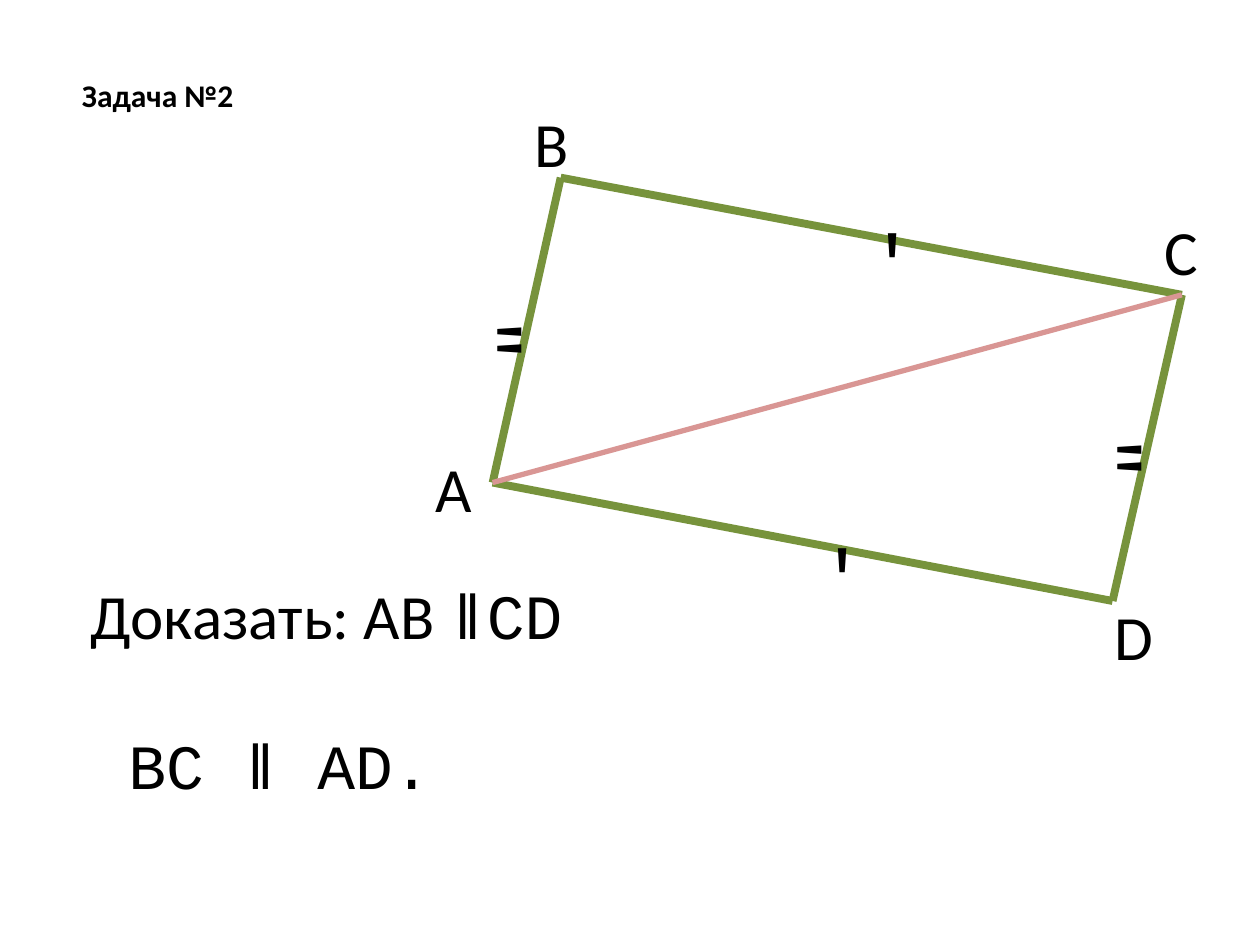
from typing import NamedTuple

import pptx
import pptx.dml.color
import pptx.enum.shapes
import pptx.enum.text
import pptx.oxml
import pptx.oxml.ns
import pptx.util

PX = 9144  # one px is a hundredth of an inch

BLACK = pptx.dml.color.RGBColor(0x00, 0x00, 0x00)
GREEN = pptx.dml.color.RGBColor(0x77, 0x93, 0x3C)
PINK = pptx.dml.color.RGBColor(0xD9, 0x96, 0x94)
SANS = "Calibri"
MONO = "Courier New"


class Point(NamedTuple):
    x: int
    y: int


class Segment(NamedTuple):
    start: Point
    end: Point
    color: pptx.dml.color.RGBColor
    weight: float


class Label(NamedTuple):
    text: str
    left: int
    top: int
    width: int
    height: int
    font: str
    size: int
    rotation: int = 0


A, B, C, D = Point(391, 383), Point(445, 141), Point(938, 234), Point(883, 477)

SEGMENTS = [
    *(Segment(start, end, GREEN, 4.5) for start, end in ((B, C), (A, D), (B, A), (C, D))),
    Segment(A, C, PINK, 3),
]

# Tick marks on equal sides, then the vertex letters
LABELS = [
    *(Label('"', left, top, 43, 84, MONO, 44, 90) for left, top in ((372, 222), (864, 315))),
    *(Label("'", left, top, 34, 84, MONO, 44) for left, top in ((641, 414), (680, 164))),
    Label("А", 336, 352, 55, 71, SANS, 36),
    Label("В", 414, 78, 55, 71, SANS, 36),
    Label("С", 914, 164, 55, 71, SANS, 36),
    Label("D", 875, 469, 59, 71, SANS, 36),
]


def px(length: int) -> pptx.util.Emu:
    return pptx.util.Emu(length * PX)


def style_font(font, name: str, size: int, bold: bool = False) -> None:
    font.name = name
    font.size = pptx.util.Pt(size)
    font.bold = bold
    font.color.rgb = BLACK


def draw_segment(slide, segment: Segment) -> None:
    line = slide.shapes.add_connector(
        pptx.enum.shapes.MSO_CONNECTOR.STRAIGHT,
        px(segment.start.x), px(segment.start.y), px(segment.end.x), px(segment.end.y))
    line.line.color.rgb = segment.color
    line.line.width = pptx.util.Pt(segment.weight)
    properties = line._element.spPr
    properties.append(pptx.oxml.parse_xml(f"<a:effectLst {pptx.oxml.ns.nsdecls('a')}/>"))


def draw_label(slide, label: Label) -> None:
    box = slide.shapes.add_textbox(
        px(label.left), px(label.top), px(label.width), px(label.height))
    box.rotation = label.rotation
    box.text_frame.word_wrap = False
    box.text_frame.text = label.text
    style_font(box.text_frame.paragraphs[0].runs[0].font, label.font, label.size)


def set_title(slide, text: str) -> None:
    title = slide.shapes.title
    title.left, title.top, title.width, title.height = px(55), px(55), px(142), px(40)
    frame = title.text_frame
    frame.text = text
    frame.word_wrap = False
    frame.auto_size = pptx.enum.text.MSO_AUTO_SIZE.NONE
    frame.vertical_anchor = pptx.enum.text.MSO_ANCHOR.TOP
    frame.paragraphs[0].alignment = pptx.enum.text.PP_ALIGN.LEFT
    style_font(frame.paragraphs[0].runs[0].font, SANS, 18, bold=True)


def draw_task(slide) -> None:
    box = slide.shapes.add_textbox(px(62), px(453), px(498), px(131))
    frame = box.text_frame
    frame.word_wrap = True
    first = frame.paragraphs[0]
    second = frame.add_paragraph()
    for para, text, font in ((first, "Доказать: АВ ", SANS),
                             (first, "ǁСD", MONO),
                             (second, "ВС ǁ АD.", MONO)):
        span = para.add_run()
        span.text = text
        style_font(span.font, font, 36)
    second.space_before = pptx.util.Pt(42)
    second._p.get_or_add_pPr().set("marL", str(px(30)))


def main() -> None:
    deck = pptx.Presentation()
    deck.slide_width, deck.slide_height = px(1000), px(750)
    page = deck.slides.add_slide(deck.slide_layouts[5])  # title only

    # Parallelogram with its diagonal
    for segment in SEGMENTS:
        draw_segment(page, segment)
    for label in LABELS:
        draw_label(page, label)

    # Heading and statement to prove
    set_title(page, "Задача №2")
    draw_task(page)

    deck.save("out.pptx")


if __name__ == "__main__":
    main()
